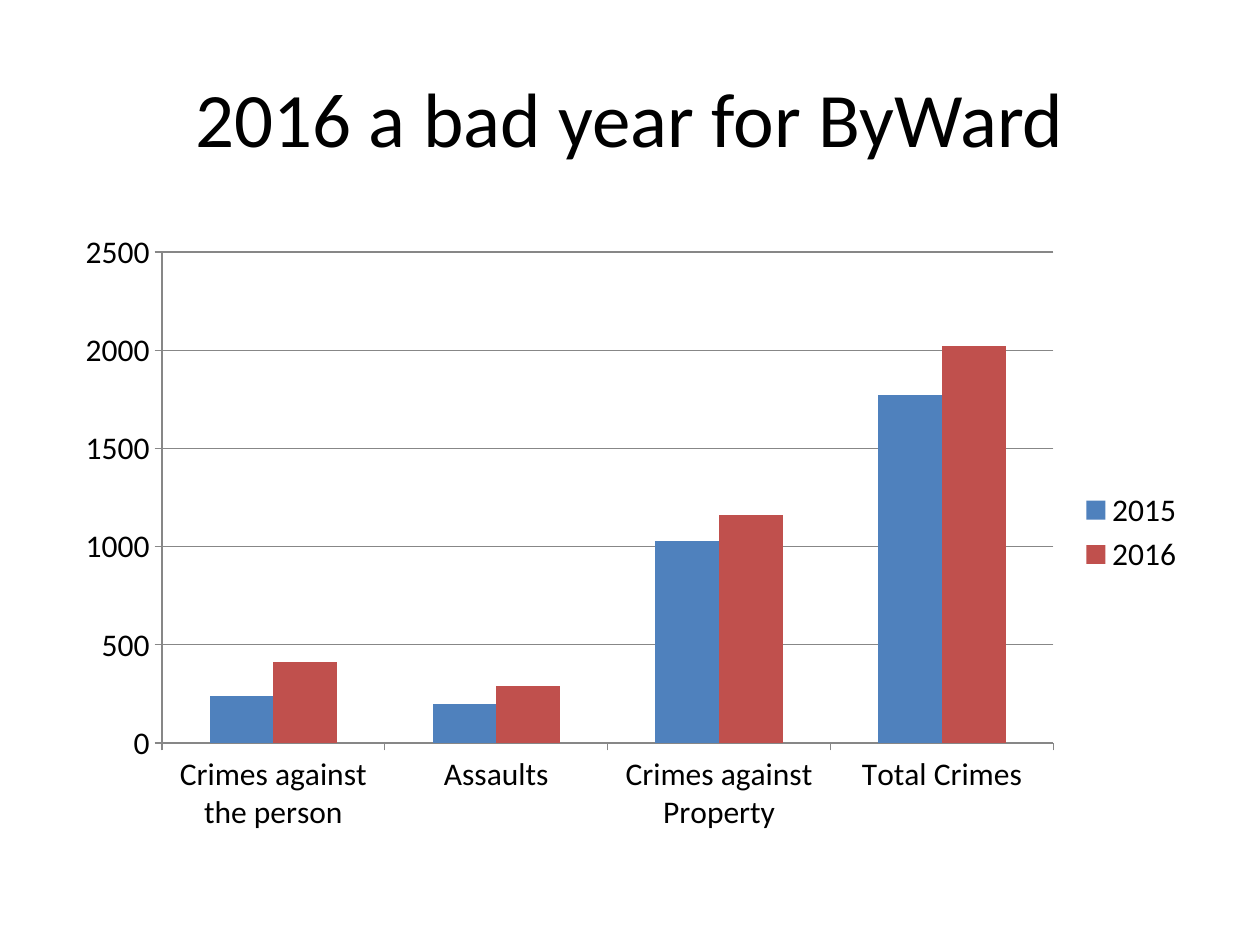
import pptx
import pptx.chart.data
import pptx.dml.color
import pptx.enum.chart
import pptx.enum.text
import pptx.util

Inches = pptx.util.Inches
COLORS = {"text": "000000", "line": "878787", "2015": "4F81BD", "2016": "C0504D"}
CATEGORIES = ["Crimes against the person", "Assaults", "Crimes against Property", "Total Crimes"]
CRIMES = {"2015": [240, 200, 1030, 1770], "2016": [410, 290, 1160, 2020]}


def color(name):
    return pptx.dml.color.RGBColor.from_string(COLORS[name])


def style_font(font, size, name="Calibri", fill="text"):
    font.name = name
    font.size = pptx.util.Pt(size)
    font.bold = False
    font.color.rgb = color(fill)


def write_text(frame, text, size=18, align=pptx.enum.text.PP_ALIGN.CENTER):
    frame.word_wrap = True
    frame.vertical_anchor = pptx.enum.text.MSO_ANCHOR.MIDDLE
    para = frame.paragraphs[0]
    para.alignment = align
    span = para.add_run()
    span.text = text
    style_font(span.font, size)


class SlideBuilder:
    """Holds the text sizes and the current slide."""

    title_size = 44
    chart_size = 18

    def __init__(self, deck):
        self.page = deck.slides.add_slide(deck.slide_layouts[5])

    def title(self, text, left, top, width, height):
        box = self.page.shapes.title
        box.left, box.top = Inches(left), Inches(top)
        box.width, box.height = Inches(width), Inches(height)
        write_text(box.text_frame, text, size=self.title_size)

    def column_chart(self, categories, series, left, top, width, height):
        data = pptx.chart.data.CategoryChartData()
        data.categories = categories
        for name, values in series.items():
            data.add_series(name, values)
        chart = self.page.shapes.add_chart(
            pptx.enum.chart.XL_CHART_TYPE.COLUMN_CLUSTERED,
            Inches(left), Inches(top), Inches(width), Inches(height), data).chart
        style_font(chart.font, self.chart_size)
        chart.has_title = False

        # Columns
        plot = chart.plots[0]
        plot.gap_width = 150
        plot.overlap = 0
        plot.vary_by_categories = False
        for columns in plot.series:
            columns.format.fill.solid()
            columns.format.fill.fore_color.rgb = color(columns.name)

        # Axes and gridlines
        chart.value_axis.has_major_gridlines = True
        chart.value_axis.minimum_scale = 0
        chart.value_axis.maximum_scale = 2500
        chart.value_axis.major_unit = 500
        for axis in (chart.category_axis, chart.value_axis):
            axis.major_tick_mark = pptx.enum.chart.XL_TICK_MARK.OUTSIDE
            axis.minor_tick_mark = pptx.enum.chart.XL_TICK_MARK.NONE
        for part in (chart.category_axis, chart.value_axis, chart.value_axis.major_gridlines):
            part.format.line.color.rgb = color("line")
            part.format.line.width = pptx.util.Pt(0.75)

        # Legend
        chart.has_legend = True
        chart.legend.position = pptx.enum.chart.XL_LEGEND_POSITION.RIGHT
        chart.legend.include_in_layout = False


def main():
    deck = pptx.Presentation()
    deck.slide_width, deck.slide_height = Inches(10), Inches(7.5)
    slide = SlideBuilder(deck)
    slide.title("2016 a bad year for ByWard", 0.5, 0.3, 9, 1.25)
    slide.column_chart(CATEGORIES, CRIMES, 0.5, 1.75, 9, 4.95)
    deck.save("out.pptx")


if __name__ == "__main__":
    main()
